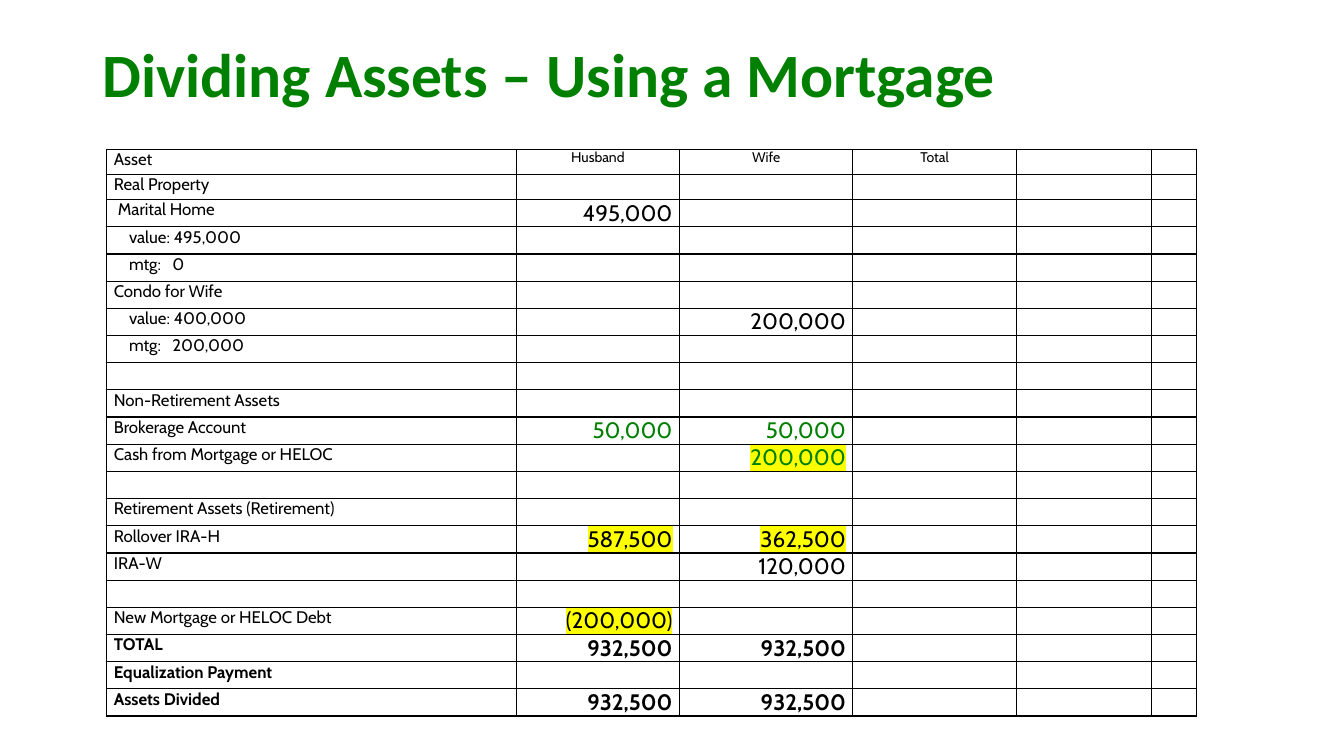
from lxml import etree
from pptx import Presentation
from pptx.dml.color import RGBColor
from pptx.enum import text
from pptx.oxml import ns
from pptx.util import Inches, Pt

# Content: asset, husband, wife, total
TITLE = "Dividing Assets – Using a Mortgage"
ROWS = [
    ("Asset", "Husband", "Wife", "Total"),
    ("Real Property",),
    ("Marital Home", "495,000"),
    ("value: 495,000",),
    ("mtg:\t0",),
    ("Condo for Wife",),
    ("value: 400,000", "", "200,000"),
    ("mtg:\t200,000",),
    (),
    ("Non-Retirement Assets",),
    ("Brokerage Account", "50,000", "50,000"),
    ("Cash from Mortgage or HELOC", "", "200,000"),
    (),
    ("Retirement Assets (Retirement)",),
    ("Rollover IRA-H", "587,500", "362,500"),
    ("IRA-W", "", "120,000"),
    (),
    ("New Mortgage or HELOC Debt", "(200,000)"),
    ("TOTAL", "932,500", "932,500"),
    ("Equalization Payment",),
    ("Assets Divided", "932,500", "932,500"),
]
COL_WIDTHS = [4.06, 1.62, 1.72, 1.62, 1.34, 0.45]
INDENTS = {"Marital": 0.04, "value:": 0.15, "mtg:": 0.15}
GREEN_ROWS = {"Brokerage Account", "Cash from Mortgage or HELOC"}
BOLD_ROWS = {"TOTAL", "Equalization Payment", "Assets Divided"}
HIGHLIGHTED = {("Cash from Mortgage or HELOC", 2), ("Rollover IRA-H", 1),
               ("Rollover IRA-H", 2), ("New Mortgage or HELOC Debt", 1)}
BLACK, GREEN, YELLOW = "000000", "008000", "FFFF00"
ALIGN = text.PP_ALIGN


def rgb(value):
    return RGBColor.from_string(value)


def add(parent, tag, **attrs):
    return etree.SubElement(parent, ns.qn(tag), **attrs)


def add_run(p, words, size, color, name, bold=False, highlight=None):
    r = p.add_run()
    r.text = words
    r.font.color.rgb = rgb(color)
    if highlight:
        mark = add(r.font._element, "a:highlight")
        add(mark, "a:srgbClr", val=highlight)
    for key, value in {"size": Pt(size), "bold": bold, "name": name}.items():
        setattr(r.font, key, value)


def add_borders(cell):
    tc_pr = cell._tc.get_or_add_tcPr()
    for side in ("a:lnL", "a:lnR", "a:lnT", "a:lnB"):
        line = add(tc_pr, side, w=str(Pt(1)))
        add(add(line, "a:solidFill"), "a:srgbClr", val=BLACK)


def fill_cell(cell, row, col):
    add_borders(cell)
    cell.fill.background()
    asset = row[0] if row else ""
    words = row[col] if col < len(row) else ""
    indent = INDENTS.get(words.split()[0], 0) if words else 0
    margins = {"margin_left": 0.07 + indent, "margin_right": 0.07,
               "margin_top": 0, "margin_bottom": 0}
    for key, value in margins.items():
        setattr(cell, key, Inches(value))
    p = cell.text_frame.paragraphs[0]
    if not words:
        add(p._p, "a:endParaRPr", sz="1200")
        return
    header = asset == "Asset"
    if col == 0:
        p.alignment, size = ALIGN.LEFT, 12
    else:
        p.alignment, size = (ALIGN.CENTER, 10) if header else (ALIGN.RIGHT, 16)
    if "\t" in words:
        tabs = add(p._p.get_or_add_pPr(), "a:tabLst")
        add(tabs, "a:tab", pos=str(Inches(0.43)), algn="l")
    add_run(p, words, size, GREEN if col and asset in GREEN_ROWS else BLACK, "Cabin",
            asset in BOLD_ROWS, YELLOW if (asset, col) in HIGHLIGHTED else None)


prs = Presentation()
prs.slide_width, prs.slide_height = Inches(13.33), Inches(7.5)
s = prs.slides.add_slide(prs.slide_layouts[6])

# Title
sp = s.shapes.add_textbox(Inches(0.92), Inches(-0.32), Inches(11.5), Inches(2.17))
tf = sp.text_frame
tf.word_wrap = True
tf.vertical_anchor = text.MSO_ANCHOR.MIDDLE
tf.paragraphs[0].line_spacing = 0.9
add_run(tf.paragraphs[0], TITLE, 44, GREEN, "Calibri", bold=True)

# Asset table: two slightly lower rows on top, then equal rows
heights = [0.25] * 2 + [0.27] * (len(ROWS) - 2)
table = s.shapes.add_table(len(ROWS), len(COL_WIDTHS), Inches(1.06), Inches(1.48),
                           Inches(sum(COL_WIDTHS)), Inches(sum(heights))).table
table.first_row = table.horz_banding = False
for column, width in zip(table.columns, COL_WIDTHS):
    column.width = Inches(width)
for i, (row, height) in enumerate(zip(ROWS, heights)):
    table.rows[i].height = Inches(height)
    for col in range(len(COL_WIDTHS)):
        fill_cell(table.cell(i, col), row, col)

prs.save("out.pptx")
